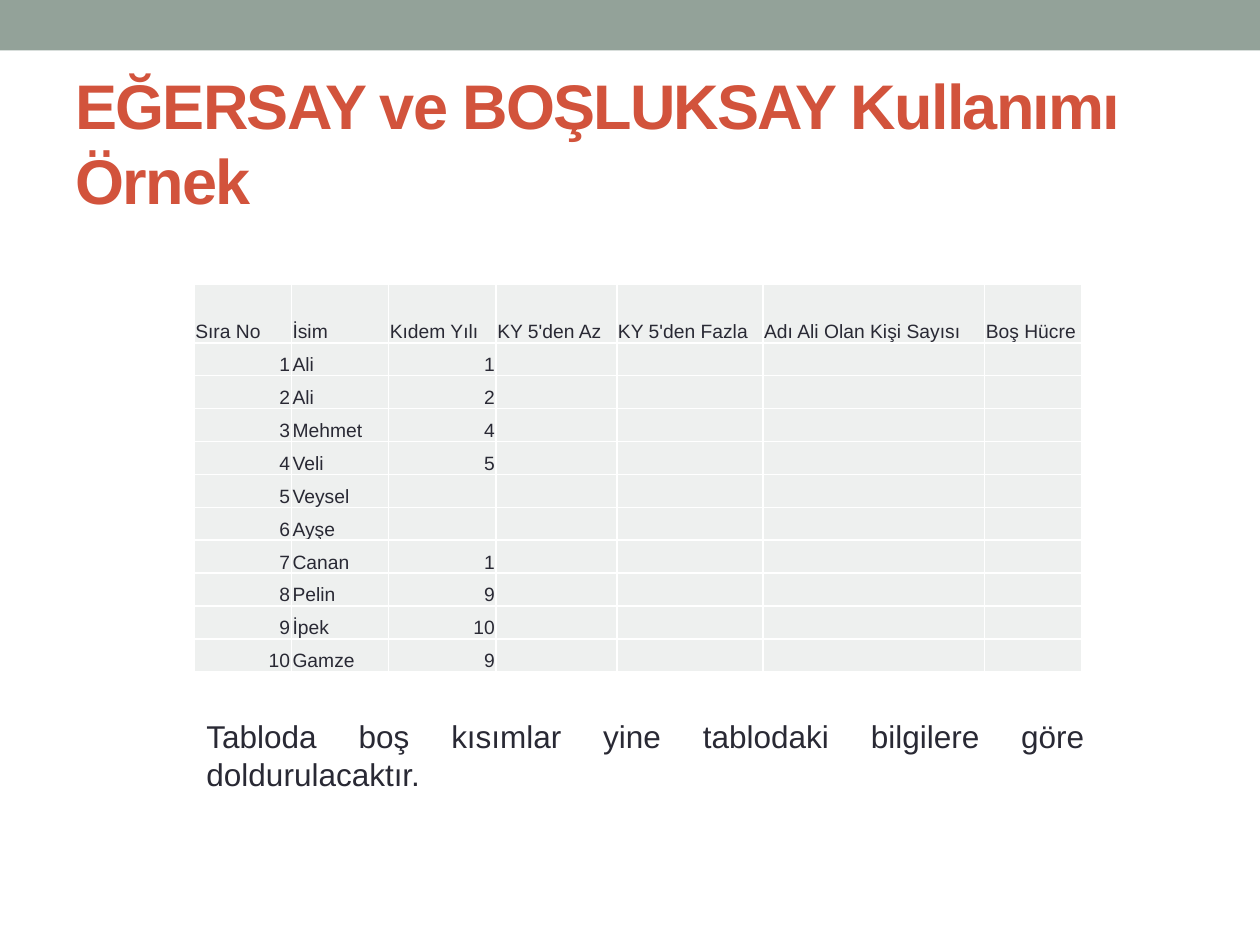
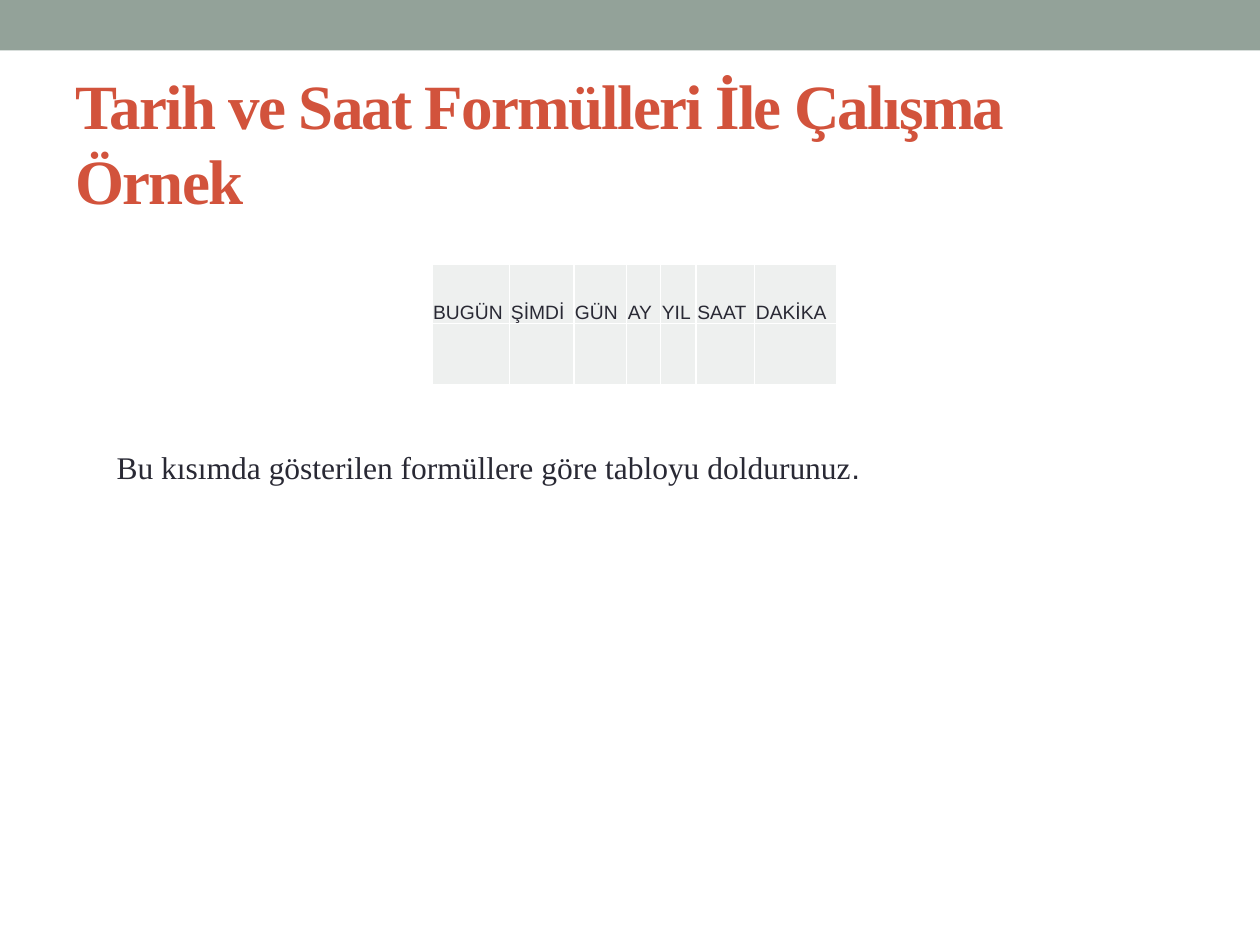
from lxml import etree
from pptx import Presentation
from pptx import util as u
from pptx.dml.color import RGBColor
from pptx.enum import shapes, text
from pptx.oxml.ns import qn

Pt = u.Pt
SAGE = RGBColor(0x93, 0xA2, 0x99)
RUST = RGBColor(0xD2, 0x53, 0x3C)
INK = RGBColor(0x29, 0x29, 0x34)
PALE = RGBColor(0xEE, 0xF0, 0xEF)
WHITE = RGBColor(0xFF, 0xFF, 0xFF)
SANS, SERIF = "Arial", "Times New Roman"
TITLE = {"size": Pt(36), "bold": True}
BODY = {"size": Pt(18)}
CELL = {"size": Pt(11), "name": SANS}
INSETS = {"margin_left": Pt(0.7), "margin_right": Pt(0.7),
          "margin_top": Pt(0.7), "margin_bottom": 0,
          "vertical_anchor": text.MSO_ANCHOR.BOTTOM}


def apply(target, values):
    for key, value in values.items():
        setattr(target, key, value)


class Deck:
    def __init__(self):
        self.prs = Presentation()
        apply(self.prs, {"slide_width": Pt(720), "slide_height": Pt(540)})
        self.slide = None

    # Slide with top band and title
    def page(self, title, face):
        self.slide = self.prs.slides.add_slide(self.prs.slide_layouts[6])
        band = self.slide.shapes.add_shape(
            shapes.MSO_SHAPE.RECTANGLE, 0, 0, Pt(720), Pt(28.8))
        band.shadow.inherit = False
        band.fill.solid()
        band.fill.fore_color.rgb = SAGE
        band.line.fill.background()
        para = self.text((36, 42, 648, 78), [(title, face)], TITLE, RUST,
                         text.MSO_ANCHOR.MIDDLE)
        para.runs[0].font._element.set("spc", "-100")

    # One paragraph of (words, typeface) runs
    def text(self, box, runs, style, color=INK, anchor=text.MSO_ANCHOR.TOP,
             align=text.PP_ALIGN.LEFT):
        frame = self.slide.shapes.add_textbox(*map(Pt, box)).text_frame
        apply(frame, {"word_wrap": True, "vertical_anchor": anchor})
        para = frame.paragraphs[0]
        para.alignment = align
        for words, face in runs:
            run = para.add_run()
            run.text = words
            apply(run.font, {**style, "name": face})
            run.font.color.rgb = color
        return para

    # Table sized by its column widths and row heights
    def table(self, left, top, widths, heights, rows):
        grid = self.slide.shapes.add_table(
            len(heights), len(widths), Pt(left), Pt(top),
            Pt(sum(widths)), Pt(sum(heights))).table
        apply(grid, {"first_row": False, "horz_banding": False})
        for col, width in zip(grid.columns, widths):
            col.width = Pt(width)
        for line, height in zip(grid.rows, heights):
            line.height = Pt(height)
        for r, line in enumerate(grid.rows):
            for c, cell in enumerate(line.cells):
                row = rows[r] if r < len(rows) else []
                self.cell(cell, row[c] if c < len(row) else "")

    def cell(self, cell, words):
        apply(cell, INSETS)
        cell.text = words
        para = cell.text_frame.paragraphs[0]
        apply(para.font, CELL)
        for run in para.runs:
            apply(run.font, CELL)
            run.font.color.rgb = INK
        if words.isdigit():
            para.alignment = text.PP_ALIGN.RIGHT
        cell.fill.solid()
        cell.fill.fore_color.rgb = PALE
        props = cell._tc.get_or_add_tcPr()
        for i, side in enumerate("LRTB"):
            edge = etree.Element(qn("a:ln" + side), w=str(Pt(1)))
            fill = etree.SubElement(edge, qn("a:solidFill"))
            etree.SubElement(fill, qn("a:srgbClr"), val=str(WHITE))
            props.insert(i, edge)


def main():
    deck = Deck()

    # Counting exercise
    deck.page("EĞERSAY ve BOŞLUKSAY Kullanımı Örnek", SANS)
    names = ["Ali", "Ali", "Mehmet", "Veli", "Veysel",
             "Ayşe", "Canan", "Pelin", "İpek", "Gamze"]
    years = ["1", "2", "4", "5", "", "", "1", "9", "10", "9"]
    heads = ["Sıra No", "İsim", "Kıdem Yılı", "KY 5'den Az", "KY 5'den Fazla",
             "Adı Ali Olan Kişi Sayısı", "Boş Hücre"]
    staff = [[str(n), *pair] for n, pair in enumerate(zip(names, years), 1)]
    deck.table(110.9, 162.3, [55.6, 55.6, 61.4, 69, 83.5, 126.7, 55.6],
               [33.6] + [18.8] * len(names), [heads] + staff)
    deck.text((110.9, 406, 516, 51),
              [("Tabloda boş kısımlar yine tablodaki bilgilere göre "
                "doldurulacaktır.", SANS)],
              BODY, align=text.PP_ALIGN.JUSTIFY)

    # Date and time exercise
    deck.page("Tarih ve Saat Formülleri İle Çalışma Örnek", SERIF)
    deck.table(246.8, 151.2, [44.5, 36.6, 30.2, 19.5, 20.3, 33.4, 46.7],
               [33.6, 35],
               [["BUGÜN", "ŞİMDİ", "GÜN", "AY", "YIL", "SAAT", "DAKİKA"]])
    deck.text((59.6, 252.7, 607, 29),
              [("Bu kısımda gösterilen formüllere göre tabloyu doldurunuz",
                SERIF), (".", SANS)], BODY)

    deck.prs.save("out.pptx")


if __name__ == "__main__":
    main()
